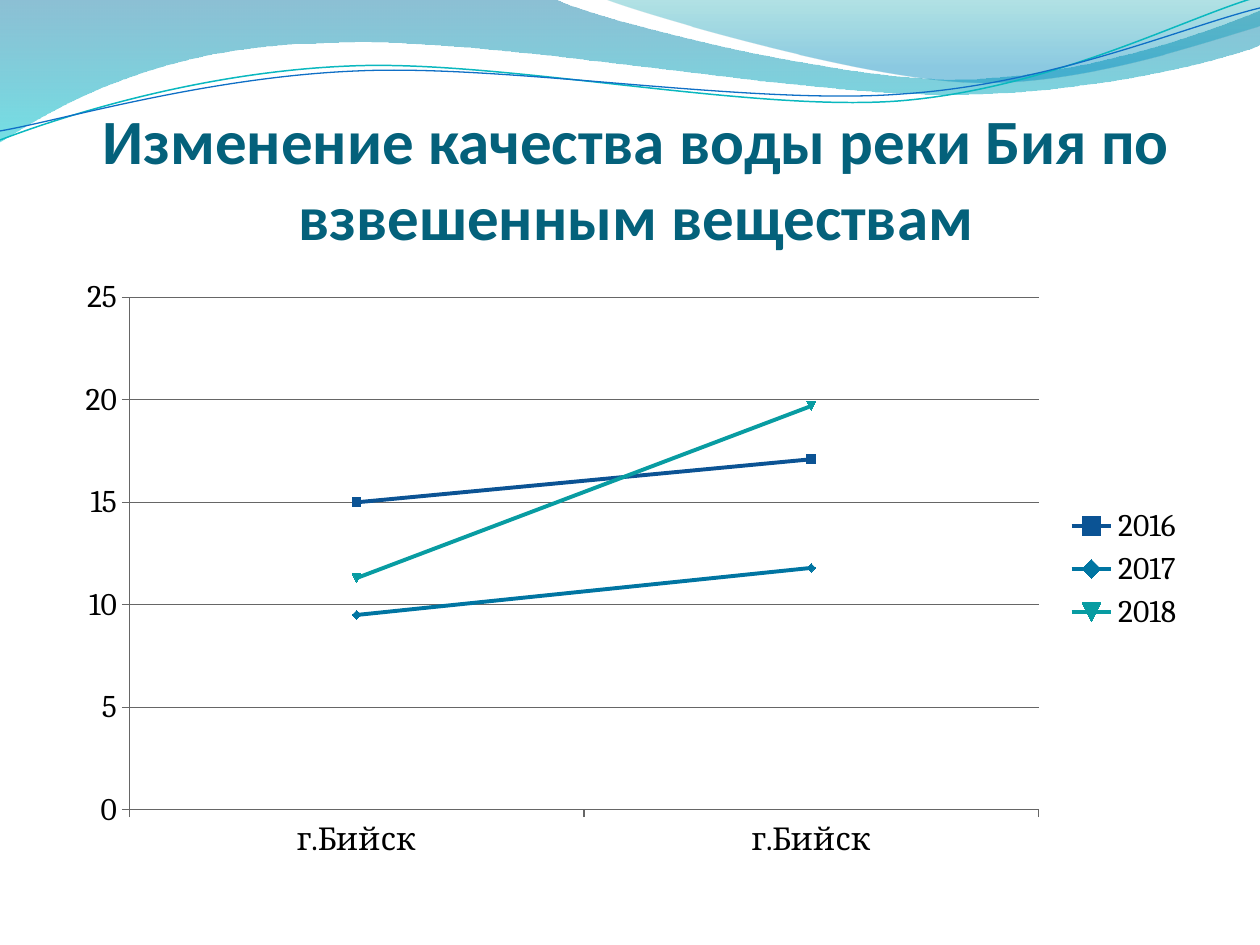
from lxml import etree
from pptx import Presentation
from pptx import util as u
from pptx.chart.data import CategoryChartData
from pptx.dml.color import RGBColor
from pptx.enum import chart as charts, text
from pptx.oxml.ns import qn

PX = 914400 / 126


def color(hex_string):
    return RGBColor.from_string(hex_string)


def draw_outline(shapes, start, segments, close):
    corners = [(round(s[-2] * PX), round(s[-1] * PX)) for s in segments]
    builder = shapes.build_freeform(*(round(n * PX) for n in start), scale=1.0)
    builder.add_line_segments(corners, close=close)
    outline = builder.convert_to_shape()
    outline.shadow.inherit = False
    edges = list(outline._element.iter(qn("a:lnTo")))
    for edge, segment in zip(edges, segments):
        if len(segment) == 2:
            continue
        edge.tag = qn("a:cubicBezTo")
        for index in (0, 1):
            x, y = segment[2 * index:2 * index + 2]
            handle = etree.Element(qn("a:pt"), x=str(round(x * PX) - outline.left),
                                   y=str(round(y * PX) - outline.top))
            edge.insert(index, handle)
    return outline


deck = Presentation()
deck.slide_width = round(1260 * PX)
deck.slide_height = round(945 * PX)
page = deck.slides.add_slide(deck.slide_layouts[6])

waves = [
    ((0, -1),
     [(554, -1), (600, 21, 837, 79, 955, 79), (1074, 79, 1207, 33, 1260, 11),
      (1261, 45), (1239, 55, 1096, 96, 940, 94), (784, 94, 481, 35, 324, 43),
      (163, 45, 58, 105, -1, 142)],
     [(0, "0074A1", 45), (1, "00C6CF", 55)]),
    ((604, -1),
     [(641, 14, 859, 78, 969, 82), (1079, 87, 1211, 40, 1260, 26), (1260, 0)],
     [(0, "00A1A9", 30), (0.8, "008BBF", 45)]),
]
for start, segments, stops in waves:
    wave = draw_outline(page.shapes, start, segments, True)
    wave.line.fill.background()
    wave.fill.gradient()
    wave.fill.gradient_angle = 270
    for stop, (position, shade, opacity) in zip(wave.fill.gradient_stops, stops):
        stop.position = position
        stop.color.rgb = color(shade)
    tints = list(wave._element.iter(qn("a:srgbClr")))
    for tint, (position, shade, opacity) in zip(tints, stops):
        etree.SubElement(tint, qn("a:alpha"), val=str(opacity * 1000))

ripples = [
    ((0, 140),
     [(60, 117, 199, 72, 349, 66), (498, 59, 747, 112, 898, 101),
      (1050, 89, 1182, 19, 1257, -3)], "0AB8BF", 0.85),
    ((0, 131),
     [(59, 121, 207, 77, 357, 71), (508, 64, 752, 106, 903, 94),
      (1053, 84, 1186, 26, 1260, 8)], "0F6FC6", 0.75),
]
for start, segments, shade, width in ripples:
    ripple = draw_outline(page.shapes, start, segments, False)
    ripple.fill.background()
    ripple.line.color.rgb = color(shade)
    ripple.line.width = u.Pt(width)

box = page.shapes.add_textbox(*(round(n * PX) for n in (69, 118, 1134, 135)))
frame = box.text_frame
frame.word_wrap = True
frame.vertical_anchor = text.MSO_ANCHOR.BOTTOM
frame.margin_left = frame.margin_right = frame.margin_bottom = 0
frame.margin_top = round(6 * PX)
para = frame.paragraphs[0]
para.text = "Изменение качества воды реки Бия по взвешенным веществам"
para.alignment = text.PP_ALIGN.CENTER
para.font.name = "Calibri"
para.font.size = u.Pt(36)
para.font.bold = True
para.font.color.rgb = color("04617B")

years = [
    ("2016", (15, 17.1), "0B5394"),
    ("2017", (9.5, 11.8), "0075A2"),
    ("2018", (11.3, 19.7), "089CA2"),
]
data = CategoryChartData()
data.categories = ["г.Бийск", "г.Бийск"]
for year, values, shade in years:
    data.add_series(year, values)
chart = page.shapes.add_chart(
    charts.XL_CHART_TYPE.LINE_MARKERS,
    *(round(n * PX) for n in (63, 267, 1134, 604)), data).chart
chart.has_title = False
chart.font.name = "Cambria"
chart.font.size = u.Pt(18)
chart.font.color.rgb = color("000000")
chart.has_legend = True
chart.legend.position = charts.XL_LEGEND_POSITION.RIGHT
chart.legend.include_in_layout = False

plot = chart.plots[0]
plot.vary_by_categories = False
for series, (year, values, shade) in zip(plot.series, years):
    series.smooth = False
    series.format.line.color.rgb = color(shade)
    series.format.line.width = u.Pt(2.25)

value_axis = chart.value_axis
value_axis.minimum_scale = 0
value_axis.maximum_scale = 25
value_axis.major_unit = 5
value_axis.has_major_gridlines = True
for axis in (chart.category_axis, value_axis):
    axis.major_tick_mark = charts.XL_TICK_MARK.OUTSIDE
for ruled in (chart.category_axis, value_axis, value_axis.major_gridlines):
    ruled.format.line.color.rgb = color("666666")
    ruled.format.line.width = u.Pt(0.75)

deck.save("out.pptx")
